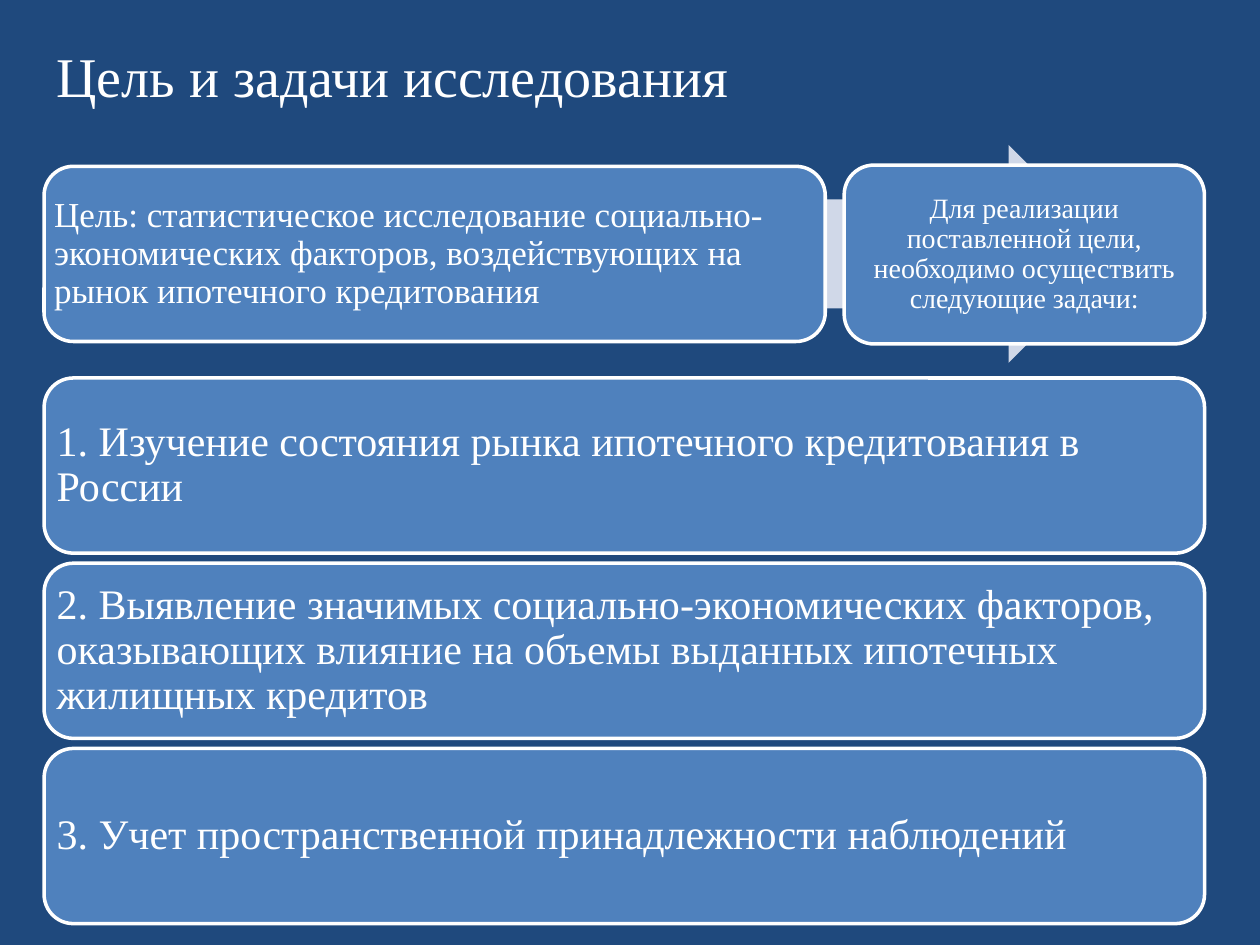
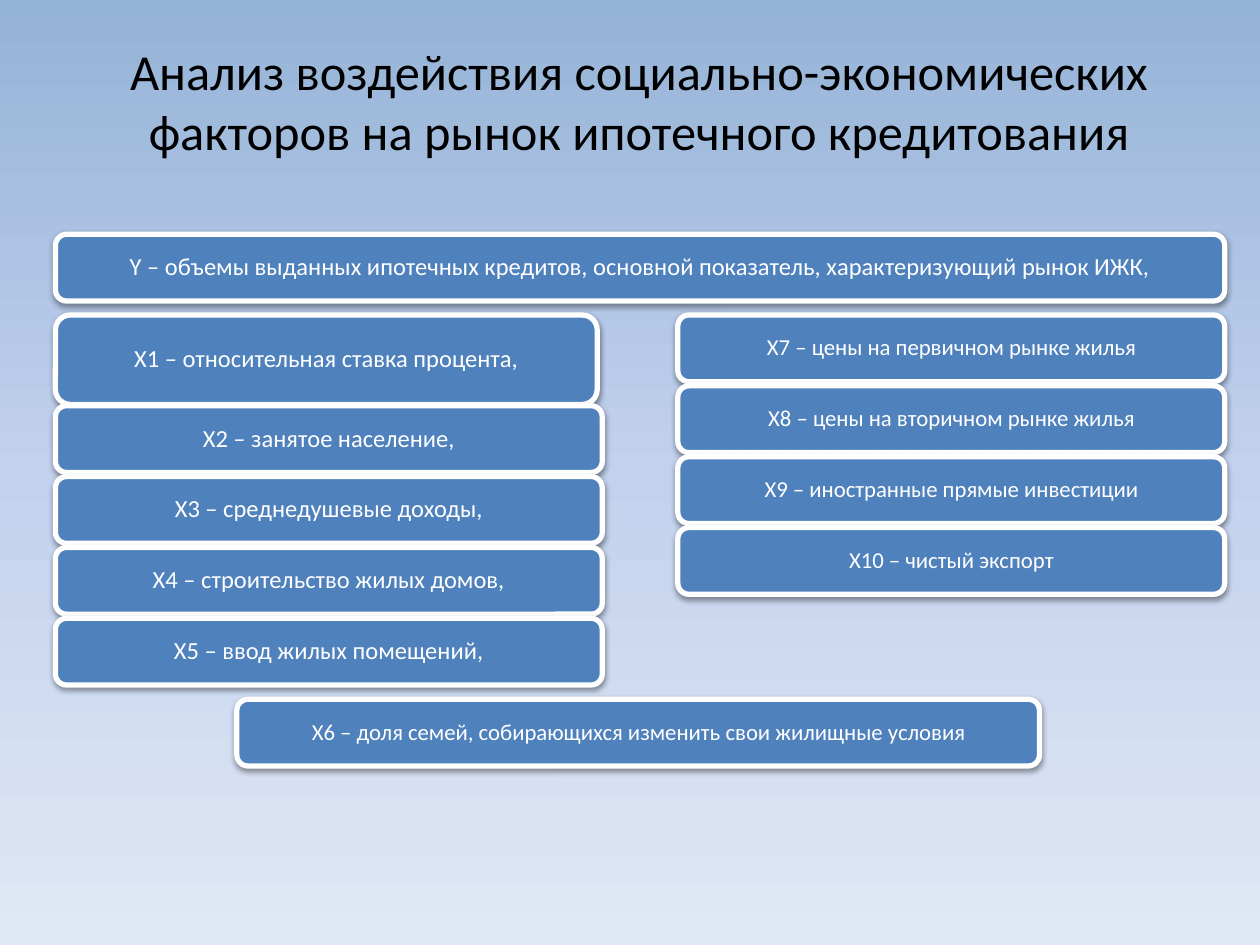
import copy
import math
from dataclasses import dataclass

import pptx
import pptx.dml.color
import pptx.enum.shapes
import pptx.enum.text
import pptx.oxml
import pptx.oxml.ns
import pptx.util
from pptx.util import Inches

# Content
GOALS_TITLE = "Цель и задачи исследования"
GOAL = (
    "Цель: статистическое исследование социально-экономических факторов, "
    "воздействующих на рынок ипотечного кредитования"
)
TASKS_INTRO = "Для реализации поставленной цели, необходимо осуществить следующие задачи:"
TASKS = [
    "1. Изучение состояния рынка ипотечного кредитования в России",
    "2. Выявление значимых социально-экономических факторов, оказывающих "
    "влияние на объемы выданных ипотечных жилищных кредитов",
    "3. Учет пространственной принадлежности наблюдений",
]

FACTORS_TITLE = (
    "Анализ воздействия социально-экономических факторов на рынок ипотечного кредитования"
)
OUTCOME = "Y – объемы выданных ипотечных кредитов, основной показатель, характеризующий рынок ИЖК,"
FIRST_FACTOR = "Х1 – относительная ставка процента,"
LEFT_FACTORS = [
    "Х2 – занятое население,",
    "Х3 – среднедушевые доходы,",
    "Х4 – строительство жилых домов,",
    "Х5 – ввод жилых помещений,",
]
RIGHT_FACTORS = [
    "Х7 – цены на первичном рынке жилья",
    "Х8 – цены на вторичном рынке жилья",
    "Х9 – иностранные прямые инвестиции",
    "Х10 – чистый экспорт",
]
HOUSING_FACTOR = "Х6 – доля семей, собирающихся изменить свои жилищные условия"


@dataclass(frozen=True)
class Theme:
    navy: str = "1F497D"
    blue: str = "4F81BD"
    pale: str = "D0D8E8"
    white: str = "FFFFFF"
    black: str = "000000"
    gradient: tuple = ((0, "95B3D7"), (0.5, "C2D1ED"), (1, "E1E8F5"))
    serif: str = "Times New Roman"
    sans: str = "Calibri"
    goals_title_size: float = 32
    factors_title_size: float = 28.8
    task_size: float = 24
    goal_size: float = 20
    intro_size: float = 16
    factor_size: float = 14
    small_factor_size: float = 13


THEME = Theme()
SHAPES = pptx.enum.shapes.MSO_SHAPE
LEFT = pptx.enum.text.PP_ALIGN.LEFT
CENTER = pptx.enum.text.PP_ALIGN.CENTER
CORNER_RATIO = 1 / 6  # default corner radius of a rounded rectangle


def rgb(color):
    return pptx.dml.color.RGBColor.from_string(color)


def write_text(shape, text, *, size, font, color=THEME.white, align=CENTER,
               padding=(0.1, 0.05), line_spacing=None):
    frame = shape.text_frame
    frame.word_wrap = True
    frame.vertical_anchor = pptx.enum.text.MSO_ANCHOR.MIDDLE
    frame.margin_left = frame.margin_right = Inches(padding[0])
    frame.margin_top = frame.margin_bottom = Inches(padding[1])
    paragraph = frame.paragraphs[0]
    paragraph.alignment = align
    if line_spacing:
        paragraph.line_spacing = line_spacing
    run = paragraph.add_run()
    run.text = text
    run.font.size = pptx.util.Pt(size)
    run.font.name = font
    run.font.color.rgb = rgb(color)


def add_title(slide, text, box, **text_format):
    shape = slide.shapes.add_textbox(*map(Inches, box))
    write_text(shape, text, **text_format)


def add_filled_shape(slide, kind, box, fill):
    shape = slide.shapes.add_shape(kind, *map(Inches, box))
    shape.shadow.inherit = False
    shape.fill.solid()
    shape.fill.fore_color.rgb = rgb(fill)
    shape.line.fill.background()
    return shape


def add_card(slide, text, box, *, line_width, padding, **text_format):
    shape = add_filled_shape(slide, SHAPES.ROUNDED_RECTANGLE, box, THEME.blue)
    shape.line.color.rgb = rgb(THEME.white)
    shape.line.width = pptx.util.Pt(line_width)
    # The rounded corners already push the text inwards
    corner = min(box[2:]) * CORNER_RATIO * (1 - math.sqrt(0.5))
    padding = [max(0, side - corner) for side in padding]
    write_text(shape, text, padding=padding, line_spacing=0.9, **text_format)
    return shape


def add_soft_shadow(shape):
    effects = shape.element.spPr.find(pptx.oxml.ns.qn("a:effectLst"))
    effects.append(pptx.oxml.parse_xml(
        f'<a:outerShdw {pptx.oxml.ns.nsdecls("a")} blurRad="{pptx.util.Pt(3.1)}" '
        f'dist="{pptx.util.Pt(1.6)}" dir="5400000" rotWithShape="0">'
        f'<a:srgbClr val="{THEME.black}"><a:alpha val="38000"/></a:srgbClr></a:outerShdw>'
    ))


def set_gradient_background(slide):
    fill = slide.background.fill
    fill.gradient()
    fill.gradient_angle = 270
    stop_list = slide.element.find(".//" + pptx.oxml.ns.qn("a:gsLst"))
    stop_list.append(copy.deepcopy(stop_list[0]))
    for stop, (position, color) in zip(fill.gradient_stops, THEME.gradient):
        stop.position = position
        stop.color.rgb = rgb(color)


def build_goals(slide):
    slide.background.fill.solid()
    slide.background.fill.fore_color.rgb = rgb(THEME.navy)
    left, width, height = 0.35, 9.21, 1.39
    add_title(slide, GOALS_TITLE, (left, 0.01, 9, 1.17), size=THEME.goals_title_size,
              font=THEME.serif, align=LEFT)

    # Tasks, stacked from top to bottom
    style = dict(line_width=2, font=THEME.serif)
    task_top, task_pitch = 3, 1.47
    for index, task in enumerate(TASKS):
        add_card(slide, task, (left, task_top + index * task_pitch, width, height),
                 padding=(0.1, 0.1), size=THEME.task_size, align=LEFT, **style)

    # Goal leading to the tasks
    add_filled_shape(slide, SHAPES.RIGHT_ARROW, (1.04, 1.15, 7.83, 1.73), THEME.pale)
    add_card(slide, GOAL, (left, 1.32, 6.2, height), padding=(0.08, 0.08),
             size=THEME.goal_size, align=LEFT, **style)
    add_card(slide, TASKS_INTRO, (6.7, 1.31, 2.86, 1.42), padding=(0.07, 0.07),
             size=THEME.intro_size, **style)


def build_factors(slide):
    set_gradient_background(slide)
    add_title(slide, FACTORS_TITLE, (0.51, 0.21, 9.13, 1.17),
              size=THEME.factors_title_size, font=THEME.sans, color=THEME.black)

    # Two columns of factors under the outcome
    left, right, column_width = 0.44, 5.38, 4.34
    height, pitch, column_top = 0.53, 0.5625, 2.5
    regular, small = THEME.factor_size, THEME.small_factor_size
    cards = [
        (OUTCOME, (left, 1.86, right + column_width - left, height), regular),
        (FIRST_FACTOR, (left, column_top, 4.3, 0.71), regular),
    ]
    columns = [
        (LEFT_FACTORS, left, 3.22, regular),
        (RIGHT_FACTORS, right, column_top, small),
    ]
    for factors, column_left, top, size in columns:
        for index, factor in enumerate(factors):
            box = (column_left, top + index * pitch, column_width, height)
            cards.append((factor, box, size))
    cards.append((HOUSING_FACTOR, (1.88, 5.55, 6.37, height), small))

    for text, box, size in cards:
        card = add_card(slide, text, box, line_width=3, padding=(0.06, 0.03),
                        size=size, font=THEME.sans)
        add_soft_shadow(card)


def main():
    presentation = pptx.Presentation()
    presentation.slide_width = Inches(10)
    presentation.slide_height = Inches(7.5)
    blank_layout = presentation.slide_layouts[6]
    for build in (build_goals, build_factors):
        build(presentation.slides.add_slide(blank_layout))
    presentation.save("out.pptx")


if __name__ == "__main__":
    main()
